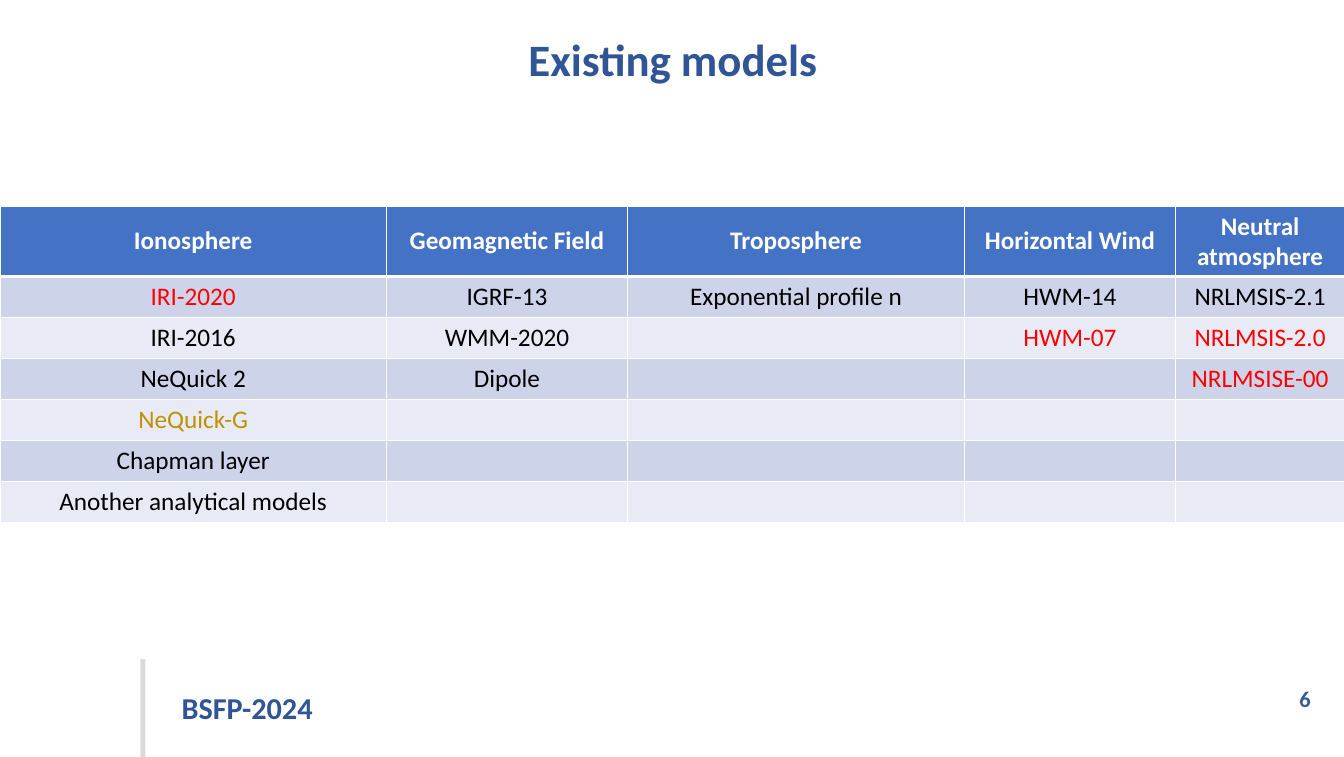
from lxml.etree import SubElement
from pptx import Presentation
from pptx.dml.color import RGBColor
from pptx.enum.shapes import MSO_SHAPE
from pptx.enum.text import MSO_ANCHOR, MSO_AUTO_SIZE, PP_ALIGN
from pptx.oxml.ns import qn
from pptx.util import Inches, Pt

# Content
TITLE = "Existing models"
EVENT = "BSFP-2024"
PAGE = "6"
MODELS = {
    "Ionosphere": ["IRI-2020", "IRI-2016", "NeQuick 2", "NeQuick-G",
                   "Chapman layer", "Another analytical models"],
    "Geomagnetic Field": ["IGRF-13", "WMM-2020", "Dipole"],
    "Troposphere": ["Exponential profile n"],
    "Horizontal Wind": ["HWM-14", "HWM-07"],
    "Neutral atmosphere": ["NRLMSIS-2.1", "NRLMSIS-2.0", "NRLMSISE-00"],
}
MARKS = {"IRI-2020": "red", "HWM-07": "red", "NRLMSIS-2.0": "red",
         "NRLMSISE-00": "red", "NeQuick-G": "gold"}
WIDTHS = [3.83, 2.39, 3.34, 2.09, 1.68]
COLORS = {"navy": "2F5597", "page": "365B9D", "bar": "DBDBDB", "head": "4472C4",
          "odd": "CDD4EA", "even": "E8EBF5", "white": "FFFFFF",
          "black": "000000", "red": "FF0000", "gold": "BF9000"}
INSET = Inches(0.05)
MARGINS = ("margin_left", "margin_top", "margin_right", "margin_bottom")


def color(name):
    return RGBColor.from_string(COLORS[name])


def assign(target, values):
    for name, value in values.items():
        setattr(target, name, value)


def write(frame, text, size, tint, bold=True, **style):
    frame.text = text
    par = frame.paragraphs[0]
    assign(par, style)
    font = par.runs[0].font if par.runs else par.font
    assign(font, {"name": "Calibri", "size": Pt(size), "bold": bold})
    font.color.rgb = color(tint)


def border(cell, side, width):
    line = SubElement(cell._tc.get_or_add_tcPr(), qn(f"a:ln{side}"), w=str(Pt(width)))
    fill = SubElement(line, qn("a:solidFill"))
    SubElement(fill, qn("a:srgbClr"), val=COLORS["white"])


def label(box, text, size, tint, wrap=True, **style):
    frame = box.text_frame
    assign(frame, dict.fromkeys(MARGINS, INSET))
    frame.word_wrap = wrap
    write(frame, text, size, tint, **style)
    return frame


deck = Presentation()
deck.slide_width, deck.slide_height = Inches(13.32), Inches(7.5)
slide = deck.slides.add_slide(deck.slide_layouts[5])
shapes = slide.shapes

# Title
title = shapes.title
assign(title, {"left": Inches(0.67), "top": Inches(0.29),
               "width": Inches(12), "height": Inches(0.58)})
frame = label(title, TITLE, 32, "navy", alignment=PP_ALIGN.CENTER)
assign(frame, {"vertical_anchor": MSO_ANCHOR.MIDDLE, "auto_size": MSO_AUTO_SIZE.NONE})

# Footer bar, event and page number
bar = shapes.add_shape(MSO_SHAPE.RECTANGLE, Inches(1.39), Inches(6.53),
                       Inches(0.05), Inches(0.99))
bar.shadow.inherit = False
bar.fill.solid()
bar.fill.fore_color.rgb = color("bar")
bar.line.fill.background()

box = shapes.add_textbox(Inches(1.75), Inches(6.82), Inches(10.73), Inches(0.47))
label(box, EVENT, 21.6, "navy", line_spacing=0.9)
box = shapes.add_textbox(Inches(12.82), Inches(6.74), Inches(0.23), Inches(0.33))
label(box, PAGE, 16, "page", wrap=False, alignment=PP_ALIGN.CENTER)

# Table of models
count = 1 + max(len(names) for names in MODELS.values())
table = shapes.add_table(count, len(MODELS), 0, Inches(2.04),
                         Inches(sum(WIDTHS)), Inches(2.84)).table
for col, (topic, names) in enumerate(MODELS.items()):
    table.columns[col].width = Inches(WIDTHS[col])
    texts = [topic] + names + [""] * (count - 1 - len(names))
    for row, text in enumerate(texts):
        head = row == 0
        cell = table.cell(row, col)
        assign(cell, dict.fromkeys(MARGINS, INSET))
        cell.vertical_anchor = MSO_ANCHOR.MIDDLE
        tint = "white" if head else MARKS.get(text, "black")
        write(cell.text_frame, text, 18, tint, bold=head, alignment=PP_ALIGN.CENTER)
        for side in "LRTB":
            thick = (head and side == "B") or (row == 1 and side == "T")
            border(cell, side, 3 if thick else 1)
        cell.fill.solid()
        cell.fill.fore_color.rgb = color("head" if head else "odd" if row % 2 else "even")

deck.save("out.pptx")
